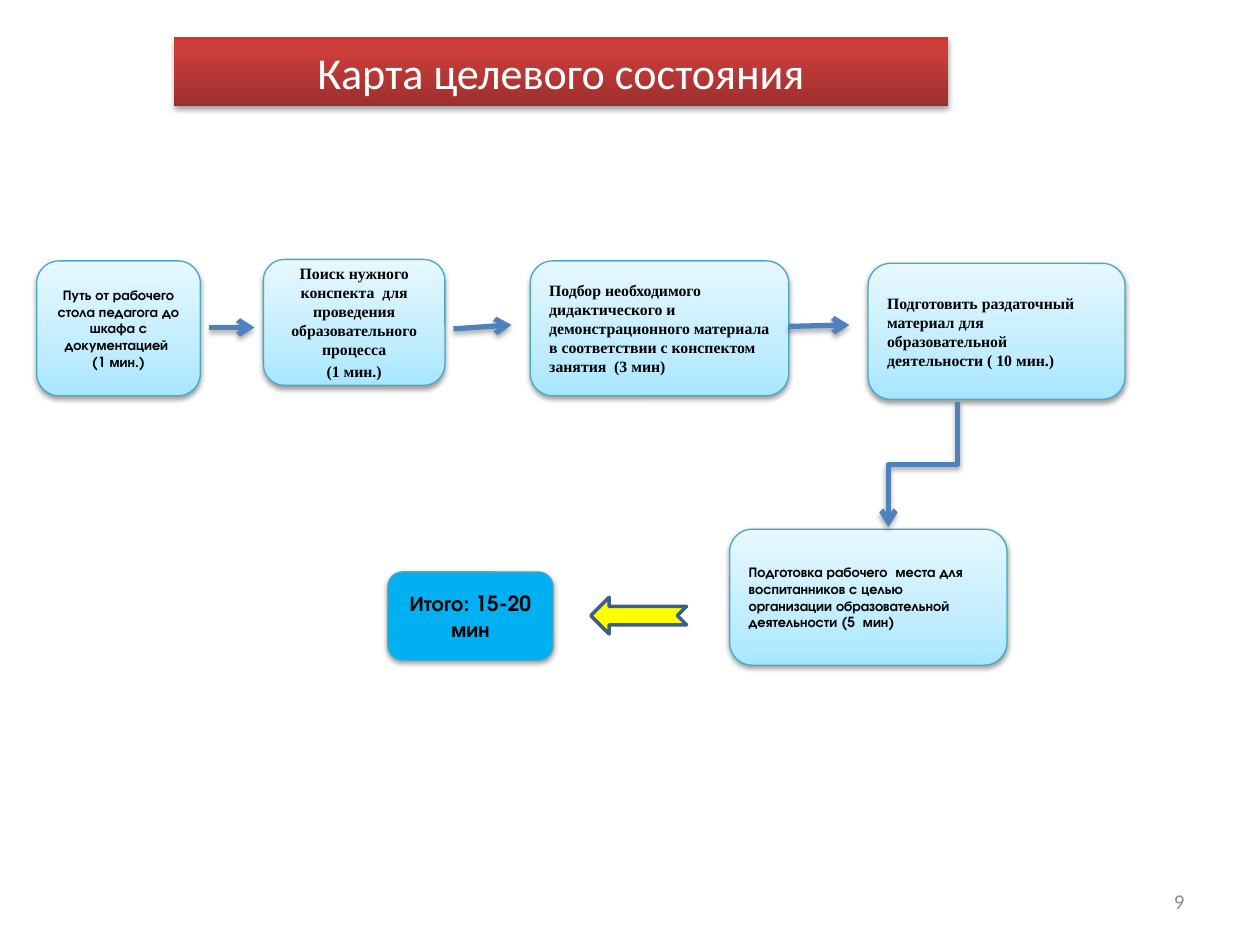
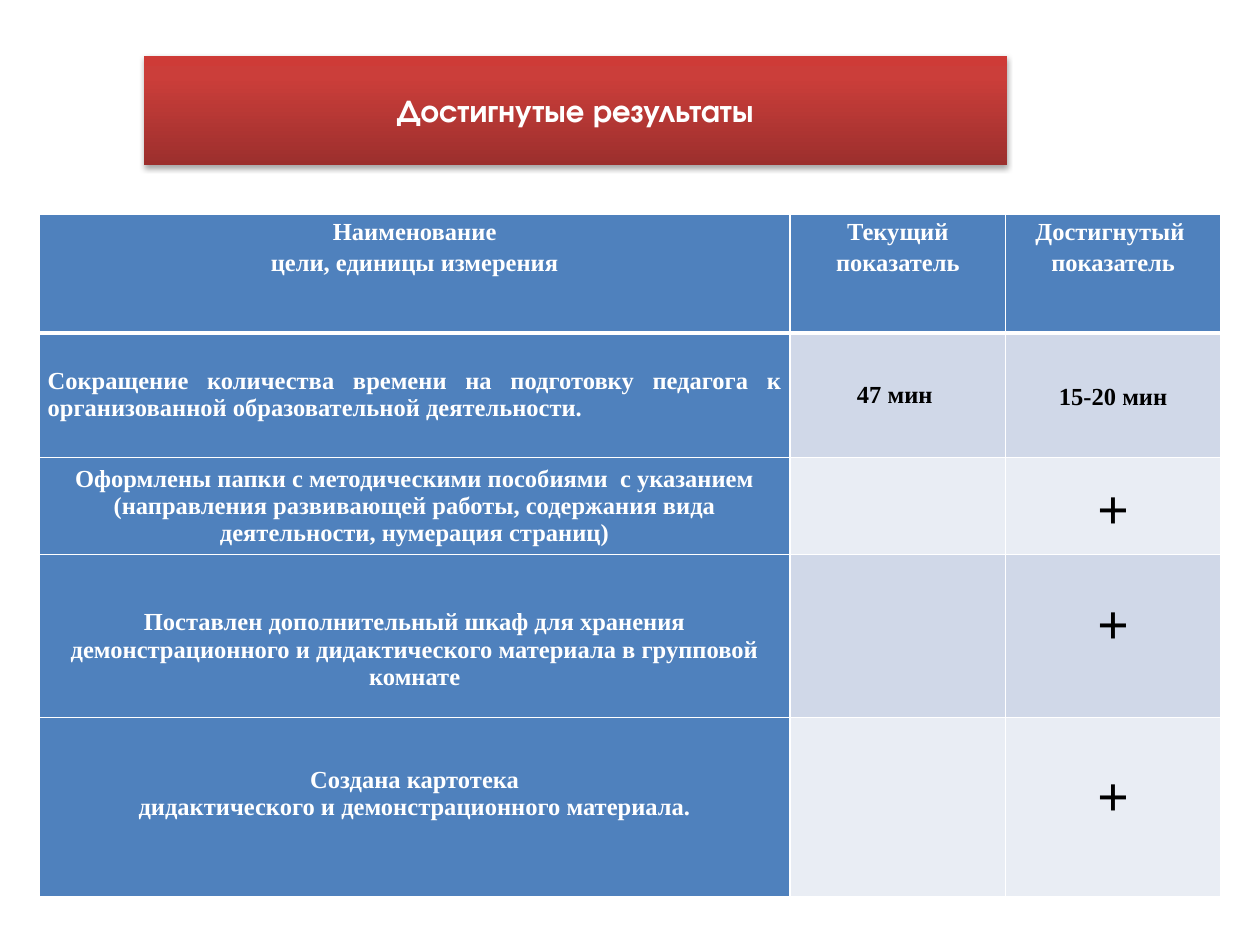
from lxml import etree
from pptx import Presentation
from pptx.dml.color import RGBColor
from pptx.enum.shapes import MSO_CONNECTOR, MSO_SHAPE
from pptx.enum.text import MSO_ANCHOR, PP_ALIGN
from pptx.oxml import parse_xml
from pptx.oxml.ns import nsdecls, qn
from pptx.util import Cm, Pt

LEFT, CENTER, RIGHT, JUSTIFY = PP_ALIGN.LEFT, PP_ALIGN.CENTER, PP_ALIGN.RIGHT, PP_ALIGN.JUSTIFY
TOP, MIDDLE = MSO_ANCHOR.TOP, MSO_ANCHOR.MIDDLE
STRAIGHT, ELBOW = MSO_CONNECTOR.STRAIGHT, MSO_CONNECTOR.ELBOW
SANS, ROUND, SERIF = "Calibri", "TeX Gyre Adventor", "Times New Roman"

COLORS = {
    "white": "FFFFFF", "black": "000000", "grey": "8C8C8C", "blue": "4F81BD",
    "total": "00B0F0", "step line": "46AAC5", "yellow": "FFFF00",
    "arrow line": "3A5F8C", "odd row": "D0D8E8", "even row": "E9EDF4",
}
TITLE_GRADIENT = [(0, "9C2F2D"), (80, "CB3E3A"), (100, "CE3B37")]
STEP_GRADIENT = [(0, "A7E6FF"), (35, "C1EDFF"), (100, "E7F8FF")]

# Process steps: place in cm, paragraphs, font, size, alignment, fill
STEPS = [
    ((0.74, 5.26, 3.3, 2.72),
     ["Путь от рабочего стола педагога до шкафа с документацией ", "(1 мин.)"],
     ROUND, 8, CENTER, STEP_GRADIENT),
    ((5.31, 5.23, 3.66, 2.54),
     ["Поиск нужного конспекта  для проведения образовательного процесса", "(1 мин.)"],
     SERIF, 9, CENTER, STEP_GRADIENT),
    ((10.69, 5.26, 5.21, 2.72),
     ["Подбор необходимого дидактического и демонстрационного материала "
      "в соответствии с конспектом занятия  (3 мин)"],
     SERIF, 9, LEFT, STEP_GRADIENT),
    ((17.5, 5.31, 5.18, 2.74),
     ["Подготовить раздаточный материал для образовательной деятельности ( 10 мин.)"],
     SERIF, 9, LEFT, STEP_GRADIENT),
    ((14.71, 10.67, 5.59, 2.74),
     ["Подготовка рабочего  места для воспитанников с целью организации "
      "образовательной деятельности (5  мин)"],
     ROUND, 8, LEFT, STEP_GRADIENT),
    ((7.82, 11.53, 3.33, 1.78), ["Итого: 15-20 мин"], ROUND, 12, CENTER, COLORS["total"]),
]
STEP_ARROWS = [
    ((4.22, 6.6), (5.13, 6.6)),
    ((9.14, 6.63), (10.31, 6.55)),
    ((15.9, 6.58), (17.12, 6.55)),
]
DOWN_ARROW = ((19.3, 8.1), (17.91, 10.62))

HEADER = [["Наименование", "цели, единицы измерения"], ["Текущий показатель"],
          ["Достигнутый ", "показатель"]]
# Results: goal, alignment, current value, achieved value
RESULTS = [
    (["Сокращение количества времени на подготовку педагога к организованной "
      "образовательной деятельности."], JUSTIFY, "47 мин ", "15-20 мин"),
    (["Оформлены папки с методическими пособиями  с указанием (направления развивающей "
      "работы, содержания вида деятельности, нумерация страниц)"], CENTER, "", "+"),
    (["Поставлен дополнительный шкаф для хранения демонстрационного и дидактического "
      "материала в групповой комнате"], CENTER, "", "+"),
    (["Создана картотека", "дидактического и демонстрационного материала."], CENTER, "", "+"),
]
COLUMN_WIDTHS = [15.14, 4.34, 4.34]
ROW_HEIGHTS = [2.39, 2.51, 1.96, 3.28, 3.61]
# (row, column): top and bottom cell margins in cm that move the text off centre
CELL_MARGINS = {(3, 0): (0.56, 0), (4, 0): (0, 0.54), (3, 2): (0, 0.6), (4, 2): (0, 0.56)}


def rgb(color):
    return RGBColor.from_string(color)


def write(frame, lines, font, size, color, align=CENTER, bold=False, spacing=None,
          before=0, anchor=MIDDLE):
    frame.word_wrap = True
    frame.vertical_anchor = anchor
    for index, line in enumerate(lines):
        paragraph = frame.paragraphs[0] if index == 0 else frame.add_paragraph()
        paragraph.alignment = align
        if spacing:
            paragraph.line_spacing = spacing
        if index and before:
            paragraph.space_before = Pt(before)
        run = paragraph.add_run()
        run.text = line
        run.font.name, run.font.size, run.font.bold = font, Pt(size), bold
        run.font.color.rgb = rgb(color)


def add_shadow(properties, alpha, distance):
    """Put a soft shadow below the shape or connector that owns the properties."""
    for effects in properties.findall(qn("a:effectLst")):
        properties.remove(effects)
    properties.append(parse_xml(
        f'<a:effectLst {nsdecls("a")}><a:outerShdw blurRad="{Pt(3.1)}" '
        f'dist="{Pt(distance)}" dir="5400000" rotWithShape="0"><a:srgbClr val="000000">'
        f'<a:alpha val="{alpha * 1000}"/></a:srgbClr></a:outerShdw></a:effectLst>'))


def add_box(slide, kind, place, fill, line=None, width=0.75):
    """Add a shape with a plain colour or a list of gradient stops as its fill."""
    shape = slide.shapes.add_shape(kind, *map(Cm, place))
    shape.shadow.inherit = False
    if line:
        shape.line.color.rgb = rgb(line)
        shape.line.width = Pt(width)
    else:
        shape.line.fill.background()
    if isinstance(fill, str):
        shape.fill.solid()
        shape.fill.fore_color.rgb = rgb(fill)
    else:
        shape.fill.background()
        properties = shape._element.spPr
        stops = "".join(f'<a:gs pos="{position * 1000}"><a:srgbClr val="{color}"/></a:gs>'
                        for position, color in fill)
        properties.replace(properties.find(qn("a:noFill")), parse_xml(
            f'<a:gradFill {nsdecls("a")} rotWithShape="1"><a:gsLst>{stops}</a:gsLst>'
            '<a:lin ang="16200000" scaled="0"/></a:gradFill>'))
    return shape


def add_title(slide, place, text, font, size, bold=False):
    band = add_box(slide, MSO_SHAPE.RECTANGLE, place, TITLE_GRADIENT)
    add_shadow(band._element.spPr, 35, 1.8)
    write(band.text_frame, [text], font, size, COLORS["white"], bold=bold)


def add_arrow(slide, kind, start, end):
    connector = slide.shapes.add_connector(kind, *map(Cm, start + end))
    connector.line.color.rgb = rgb(COLORS["blue"])
    connector.line.width = Pt(3)
    line = connector.line._get_or_add_ln()
    etree.SubElement(line, qn("a:tailEnd"), type="arrow")
    add_shadow(connector._element.spPr, 35, 1.8)
    return connector


def add_down_arrow(slide, start, end):
    """Add an elbow that leaves downwards: lay it flat, then turn it by 90 degrees."""
    middle_x, middle_y = (start[0] + end[0]) / 2, (start[1] + end[1]) / 2
    half_length, half_width = (end[1] - start[1]) / 2, (start[0] - end[0]) / 2
    connector = add_arrow(slide, ELBOW,
                          (middle_x - half_length, middle_y - half_width),
                          (middle_x + half_length, middle_y + half_width))
    connector._element.spPr.find(qn("a:xfrm")).set("rot", "5400000")


def style_cell(cell, fill, bottom_width, margins):
    cell.margin_left = cell.margin_right = Cm(0.17)
    cell.margin_top, cell.margin_bottom = map(Cm, margins)
    cell.fill.solid()
    cell.fill.fore_color.rgb = rgb(fill)
    properties = cell._tc.get_or_add_tcPr()
    for index, side in enumerate("LRTB"):
        width = Pt(bottom_width if side == "B" else 1)
        properties.insert(index, parse_xml(
            f'<a:ln{side} {nsdecls("a")} w="{width}"><a:solidFill>'
            f'<a:srgbClr val="{COLORS["white"]}"/></a:solidFill></a:ln{side}>'))


def build_target_map(slide):
    add_title(slide, (3.51, 0.74, 15.6, 1.4), "Карта целевого состояния", SANS, 25.2)
    number = slide.shapes.add_textbox(*map(Cm, (18.21, 17.65, 5.92, 1.02)))
    write(number.text_frame, ["9"], SANS, 12, COLORS["grey"], RIGHT)
    for place, lines, font, size, align, fill in STEPS:
        step = add_box(slide, MSO_SHAPE.ROUNDED_RECTANGLE, place, fill, COLORS["step line"])
        add_shadow(step._element.spPr, 38, 1.6)
        write(step.text_frame, lines, font, size, COLORS["black"], align, bold=True,
              before=2 if font == SERIF else 0)
    total_arrow = add_box(slide, MSO_SHAPE.NOTCHED_RIGHT_ARROW, (11.91, 12.04, 1.93, 0.74),
                          COLORS["yellow"], COLORS["arrow line"], 2)
    total_arrow.rotation = 180
    for start, end in STEP_ARROWS:
        add_arrow(slide, STRAIGHT, start, end)
    add_down_arrow(slide, *DOWN_ARROW)


def build_results(slide):
    add_title(slide, (2.9, 1.12, 17.4, 2.21), "Достигнутые результаты", ROUND, 18, bold=True)
    frame = slide.shapes.add_table(
        len(ROW_HEIGHTS), len(COLUMN_WIDTHS), Cm(0.79), Cm(4.32),
        Cm(sum(COLUMN_WIDTHS)), Cm(sum(ROW_HEIGHTS)))
    table = frame.table
    table.first_row = table.horz_banding = False
    for column, width in zip(table.columns, COLUMN_WIDTHS):
        column.width = Cm(width)
    for row, height in zip(table.rows, ROW_HEIGHTS):
        row.height = Cm(height)

    for column, lines in enumerate(HEADER):
        cell = table.cell(0, column)
        style_cell(cell, COLORS["blue"], 3, (0, 0))
        write(cell.text_frame, lines, SERIF, 14, COLORS["white"], bold=True, spacing=1.15)
        cell.vertical_anchor = TOP
    for row, (goal, align, current, achieved) in enumerate(RESULTS, start=1):
        row_fill = COLORS["odd row" if row % 2 else "even row"]
        for column, lines in enumerate((goal, [current], [achieved])):
            cell = table.cell(row, column)
            is_goal = column == 0
            style_cell(cell, COLORS["blue"] if is_goal else row_fill, 1,
                       CELL_MARGINS.get((row, column), (0, 0)))
            cell.vertical_anchor = MIDDLE
            if any(lines):
                write(cell.text_frame, lines, SERIF, 32 if lines == ["+"] else 14,
                      COLORS["white" if is_goal else "black"],
                      align if is_goal else CENTER, bold=True,
                      spacing=1.15 if column == 2 else None)
                cell.vertical_anchor = MIDDLE


def main():
    presentation = Presentation()
    presentation.slide_width, presentation.slide_height = Cm(25.4), Cm(19.05)
    blank = presentation.slide_layouts[6]
    for build in (build_target_map, build_results):
        build(presentation.slides.add_slide(blank))
    presentation.save("out.pptx")


if __name__ == "__main__":
    main()
